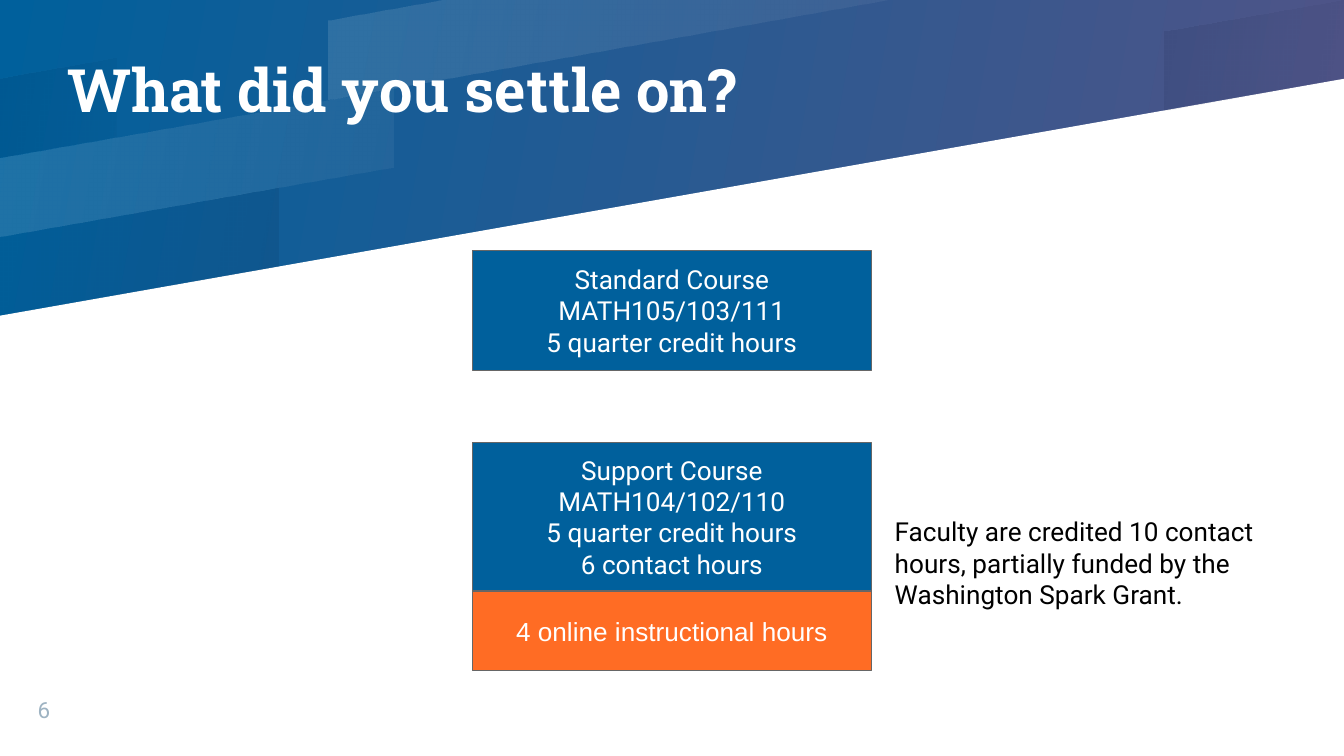
import math

import pptx
import pptx.dml.color
import pptx.enum.shapes
import pptx.enum.text
import pptx.oxml
import pptx.oxml.ns
import pptx.util
from pptx.util import Cm, Pt

RGBColor = pptx.dml.color.RGBColor
ANCHOR = pptx.enum.text.MSO_ANCHOR
ALIGN = pptx.enum.text.PP_ALIGN

BLUE = RGBColor(0x00, 0x60, 0x9C)
PURPLE = RGBColor(0x55, 0x53, 0x86)
ORANGE = RGBColor(0xFF, 0x6C, 0x24)
WHITE = RGBColor(0xFF, 0xFF, 0xFF)
BLACK = RGBColor(0x00, 0x00, 0x00)
NIGHT = RGBColor(0x00, 0x00, 0x1A)
GREY = RGBColor(0x66, 0x66, 0x66)
PALE = RGBColor(0x9E, 0xB3, 0xC2)

WIDTH, HEIGHT = 25.4, 14.29
SLOPE = math.tan(math.radians(10))
BAND_HEIGHT = 1.49

# left, right, top at the left edge, colour, start and end opacity in percent
BANDS = [
    (6.2, WIDTH, 0.39, WHITE, 12, 5),
    (0, 2.21, 1.48, NIGHT, 8, 2),
    (0, 5.26, 4.47, NIGHT, 2, 8),
    (22, WIDTH, 0.6, NIGHT, 8, 2),
    (0, 7.44, 2.98, WHITE, 12, 5),
]

# top, height, fill, font, lines
COURSES = [
    (4.74, 2.26, BLUE, "Roboto",
     ["Standard Course", "MATH105/103/111", "5 quarter credit hours"]),
    (8.37, 2.8, BLUE, "Roboto",
     ["Support Course", "MATH104/102/110", "5 quarter credit hours",
      "6 contact hours"]),
    (11.17, 1.51, ORANGE, "Arial", ["4 online instructional hours"]),
]


def set_gradient(fill, colors):
    fill.gradient()
    fill.gradient_angle = 350
    for stop, color in zip(fill.gradient_stops, colors):
        stop.color.rgb = color


def add_polygon(slide, points):
    points = [(Cm(x), Cm(y)) for x, y in points]
    builder = slide.shapes.build_freeform(*points[0], scale=1.0)
    builder.add_line_segments(points[1:], close=True)
    sp = builder.convert_to_shape()
    sp.shadow.inherit = False
    sp.line.fill.background()
    return sp


def add_band(slide, left, right, top, color, *opacities):
    """Draw a rising translucent band, cut off at the slide's top edge."""
    bottom = top + BAND_HEIGHT
    right_top = min(right, left + top / SLOPE)
    right_bottom = min(right, left + bottom / SLOPE)
    sp = add_polygon(slide, [
        (left, top),
        (left, bottom),
        (right_bottom, bottom - SLOPE * (right_bottom - left)),
        (right_top, top - SLOPE * (right_top - left)),
    ])
    set_gradient(sp.fill, [color, color])
    stops = sp._element.spPr.iter(pptx.oxml.ns.qn("a:srgbClr"))
    for clr, opacity in zip(stops, opacities):
        clr.append(pptx.oxml.parse_xml(
            f'<a:alpha {pptx.oxml.ns.nsdecls("a")} val="{opacity * 1000}"/>'))


def add_backdrop(slide, width, height):
    set_gradient(slide.background.fill, [BLUE, PURPLE])
    page = add_polygon(slide, [
        (0, height), (width, height),
        (width, BAND_HEIGHT), (0, BAND_HEIGHT + width * SLOPE)])
    page.fill.solid()
    page.fill.fore_color.rgb = WHITE
    for band in BANDS:
        add_band(slide, *band)


def write_lines(sp, lines, font, size, color, anchor, inset=0.25, align=None):
    tf = sp.text_frame
    tf.word_wrap = True
    tf.vertical_anchor = anchor
    tf.margin_left = tf.margin_right = Cm(inset)
    tf.margin_top = tf.margin_bottom = Cm(inset)
    for i, line in enumerate(lines):
        p = tf.add_paragraph() if i else tf.paragraphs[0]
        p.alignment = align
        r = p.add_run()
        r.text = line
        r.font.name = font
        r.font.size = Pt(size)
        r.font.color.rgb = color
    return tf


def add_text(slide, box, text, *style, **options):
    sp = slide.shapes.add_textbox(*map(Cm, box))
    return write_lines(sp, [text], *style, **options)


def add_title(slide, box, text):
    tf = add_text(slide, box, text, "Roboto Slab", 32, WHITE,
                  ANCHOR.MIDDLE, inset=0)
    r = tf.paragraphs[0].runs[0]
    r.font.bold = True
    fill = r._r.rPr.find(pptx.oxml.ns.qn("a:solidFill"))
    fill.addnext(pptx.oxml.parse_xml(
        f'<a:effectLst {pptx.oxml.ns.nsdecls("a")}>'
        '<a:outerShdw blurRad="28575" dist="19050" dir="5400000">'
        '<a:srgbClr val="00001A"><a:alpha val="50000"/></a:srgbClr>'
        '</a:outerShdw></a:effectLst>'))


def add_courses(slide, left, width):
    for top, height, color, font, lines in COURSES:
        sp = slide.shapes.add_shape(
            pptx.enum.shapes.MSO_SHAPE.RECTANGLE,
            Cm(left), Cm(top), Cm(width), Cm(height))
        sp.shadow.inherit = False
        sp.fill.solid()
        sp.fill.fore_color.rgb = color
        sp.line.color.rgb = GREY
        sp.line.width = Pt(0.75)
        write_lines(sp, lines, font, 14, WHITE, ANCHOR.MIDDLE,
                    align=ALIGN.CENTER)


def main():
    prs = pptx.Presentation()
    prs.slide_width, prs.slide_height = Cm(WIDTH), Cm(HEIGHT)
    slide = prs.slides.add_slide(prs.slide_layouts[6])
    add_backdrop(slide, WIDTH, HEIGHT)
    add_title(slide, (1.27, -0.84, 15.24, 5.03), "What did you settle on?")
    add_text(slide, (0.71, 12.98, 1.35, 0.69), "6", "Roboto", 12, PALE,
             ANCHOR.BOTTOM, inset=0)
    add_courses(slide, 8.93, 7.54)
    add_text(slide, (16.66, 9.5, 8.23, 2.39),
             "Faculty are credited 10 contact hours, partially funded by the "
             "Washington Spark Grant.", "Roboto", 14, BLACK, ANCHOR.TOP)
    prs.save("out.pptx")


if __name__ == "__main__":
    main()
